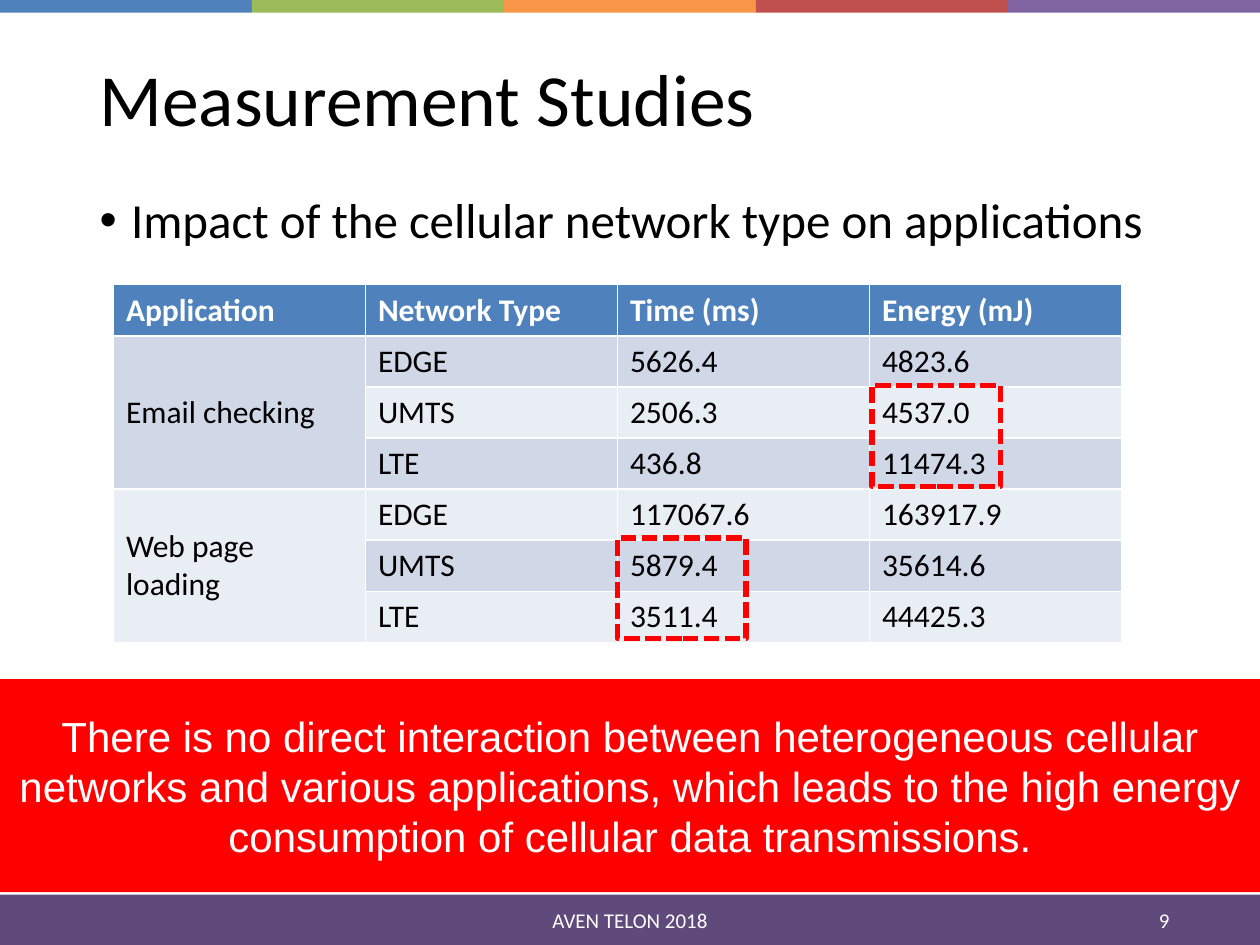
from pptx import Presentation
from pptx.dml.color import RGBColor
from pptx.enum.dml import MSO_LINE
from pptx.enum.shapes import MSO_SHAPE
from pptx.enum.text import MSO_ANCHOR, MSO_AUTO_SIZE, PP_ALIGN
from pptx.util import Inches, Pt

RECT = MSO_SHAPE.RECTANGLE
MIDDLE = MSO_ANCHOR.MIDDLE
NO_FIT = MSO_AUTO_SIZE.NONE
LEFT, CENTER = PP_ALIGN.LEFT, PP_ALIGN.CENTER
DASH = MSO_LINE.SQUARE_DOT

BLACK = RGBColor(0x00, 0x00, 0x00)
WHITE = RGBColor(0xFF, 0xFF, 0xFF)
RED = RGBColor(0xFF, 0x00, 0x00)
BLUE = RGBColor(0x4F, 0x81, 0xBD)
GREEN = RGBColor(0x9B, 0xBB, 0x59)
ORANGE = RGBColor(0xF7, 0x96, 0x46)
BRICK = RGBColor(0xC0, 0x50, 0x4D)
PURPLE = RGBColor(0x80, 0x64, 0xA2)
DARK_PURPLE = RGBColor(0x60, 0x4A, 0x7B)
BAND_DARK = RGBColor(0xD0, 0xD8, 0xE8)
BAND_LIGHT = RGBColor(0xE9, 0xED, 0xF4)

prs = Presentation()
prs.slide_width, prs.slide_height = Inches(10), Inches(7.5)
s = prs.slides.add_slide(prs.slide_layouts[1])


def add_rect(x, y, w, h, fill=None):
    """Add a rectangle without outline or shadow, unfilled if fill is None."""
    sp = s.shapes.add_shape(RECT, Inches(x), Inches(y), Inches(w), Inches(h))
    sp.shadow.inherit = False
    sp.line.fill.background()
    if fill is None:
        sp.fill.background()
    else:
        sp.fill.solid()
        sp.fill.fore_color.rgb = fill
    return sp


def set_text(tf, text, size, color, align=LEFT, name="Calibri", bold=False):
    tf.text = text
    p = tf.paragraphs[0]
    p.alignment = align
    p.font.name, p.font.size, p.font.bold = name, Pt(size), bold
    p.font.color.rgb = color
    return p


# Colour strip and footer
for i, color in enumerate([BLUE, GREEN, ORANGE, BRICK, PURPLE]):
    add_rect(2 * i, 0, 2, 0.1, color)
add_rect(0, 7.1, 10, 0.4, DARK_PURPLE)
for x, text in [(4.24, "AVEN TELON 2018"), (8.48, "9")]:
    tf = s.shapes.add_textbox(Inches(x), Inches(7.1), Inches(1.52), Inches(0.4)).text_frame
    tf.word_wrap = True
    tf.vertical_anchor = MIDDLE
    set_text(tf, text, 12, WHITE, CENTER)

# Title and bullet
title, body = s.shapes.title, s.placeholders[1]
for sp, y, h in [(title, 0.32, 0.99), (body, 1.41, 5.49)]:
    sp.left, sp.top, sp.width, sp.height = Inches(0.69), Inches(y), Inches(8.62), Inches(h)
    sp.text_frame.auto_size = NO_FIT
title.text_frame.vertical_anchor = MIDDLE
set_text(title.text_frame, "Measurement Studies", 42, BLACK).line_spacing = 0.9
p = set_text(body.text_frame, "Impact of the cellular network type on applications", 28, BLACK)
p.line_spacing, p.space_before = 1.1, Pt(10)
pPr = p._p.get_or_add_pPr()
pPr.set("marL", str(Inches(0.25)))
pPr.set("indent", str(Inches(-0.25)))

# Measurements, with each application spanning three network types
rows = [
    ("Application", "Network Type", "Time (ms)", "Energy (mJ)"),
    ("Email checking", "EDGE", "5626.4", "4823.6"),
    ("", "UMTS", "2506.3", "4537.0"),
    ("", "LTE", "436.8", "11474.3"),
    ("Web page loading", "EDGE", "117067.6", "163917.9"),
    ("", "UMTS", "5879.4", "35614.6"),
    ("", "LTE", "3511.4", "44425.3"),
]
table = s.shapes.add_table(len(rows), 4, Inches(0.9), Inches(2.26), Inches(8), Inches(2.84)).table
for r, row in enumerate(rows):
    header = r == 0
    fill = BLUE if header else BAND_DARK if r % 2 else BAND_LIGHT
    for c, text in enumerate(row):
        cell = table.cell(r, c)
        cell.fill.solid()
        cell.fill.fore_color.rgb = fill
        if text:
            set_text(cell.text_frame, text, 18, WHITE if header else BLACK, bold=header)
for r in (1, 4):
    table.cell(r, 0).merge(table.cell(r + 2, 0))
    table.cell(r, 0).vertical_anchor = MIDDLE

# Highlights
for x, y in [(6.92, 3.06), (4.9, 4.27)]:
    sp = add_rect(x, y, 1.02, 0.8)
    sp.line.color.rgb = RED
    sp.line.width = Pt(3)
    sp.line.dash_style = DASH

# Conclusion
tf = add_rect(0, 5.39, 10, 1.69, RED).text_frame
tf.word_wrap = True
tf.vertical_anchor = MIDDLE
set_text(
    tf,
    "There is no direct interaction between heterogeneous cellular networks and various "
    "applications, which leads to the high energy consumption of cellular data transmissions.",
    24, WHITE, CENTER, "Arial",
)

prs.save("out.pptx")
